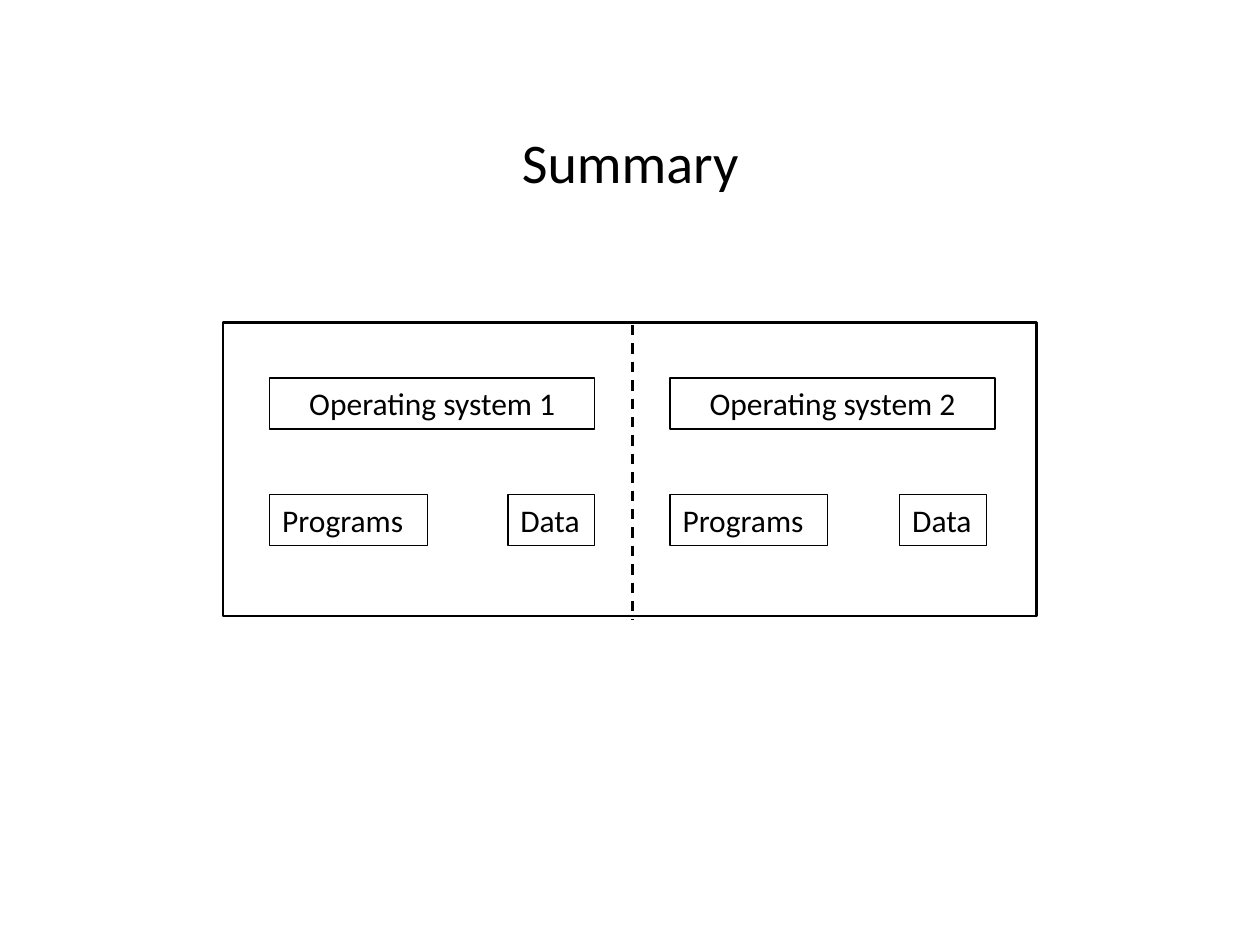
from dataclasses import dataclass

from lxml.etree import SubElement
from pptx import Presentation
from pptx.dml.color import RGBColor
from pptx.enum.dml import MSO_LINE
from pptx.enum.shapes import MSO_CONNECTOR, MSO_SHAPE
from pptx.enum.text import MSO_ANCHOR, PP_ALIGN
from pptx.oxml.ns import qn
from pptx.util import Cm, Pt


@dataclass(frozen=True)
class Theme:
    font: str = "Calibri"
    ink: RGBColor = RGBColor(0, 0, 0)
    title_size: Pt = Pt(32)
    label_size: Pt = Pt(18)
    thin: Pt = Pt(0.75)
    thick: Pt = Pt(1.5)


THEME = Theme()


def write_text(sp, text, size, align, wrap):
    tf = sp.text_frame
    tf.text = text
    tf.word_wrap = wrap
    tf.vertical_anchor = MSO_ANCHOR.TOP
    p = tf.paragraphs[0]
    p.alignment = align
    font = p.runs[0].font
    font.name, font.size = THEME.font, size
    font.color.rgb = THEME.ink


def add_title(s, text, x, y, w, h):
    sp = s.shapes.title
    sp.left, sp.top, sp.width, sp.height = Cm(x), Cm(y), Cm(w), Cm(h)
    write_text(sp, text, THEME.title_size, PP_ALIGN.CENTER, False)


def add_box(shapes, x, y, w, h, line_width):
    sp = shapes.add_shape(MSO_SHAPE.RECTANGLE, Cm(x), Cm(y), Cm(w), Cm(h))
    sp.shadow.inherit = False
    sp.fill.background()
    sp.line.color.rgb = THEME.ink
    sp.line.width = line_width
    return sp


def add_label(shapes, text, x, y, w, align=PP_ALIGN.LEFT, wrap=False):
    sp = add_box(shapes, x, y, w, 1.03, THEME.thin)
    write_text(sp, text, THEME.label_size, align, wrap)


def add_divider(shapes, x, top, bottom):
    line = shapes.add_connector(MSO_CONNECTOR.STRAIGHT, Cm(x), Cm(top), Cm(x), Cm(bottom))
    line.line.color.rgb = THEME.ink
    line.line.width = THEME.thick
    line.line.dash_style = MSO_LINE.DASH
    SubElement(line._element.spPr, qn("a:effectLst"))


def add_partition(shapes, number, x, data_x):
    add_label(shapes, "Programs", x, 9.97, 3.18)
    add_label(shapes, "Data", data_x, 9.97, 1.75)
    add_label(shapes, f"Operating system {number}", x, 7.62, 6.55, PP_ALIGN.CENTER, True)


def main():
    prs = Presentation()
    prs.slide_width, prs.slide_height = Cm(25.4), Cm(19.05)
    s = prs.slides.add_slide(prs.slide_layouts[5])

    # Title
    add_title(s, "Summary", 10.24, 2.44, 4.93, 1.63)

    # Machine split into two partitions
    machine = s.shapes.add_group_shape().shapes
    add_box(machine, 4.5, 6.5, 16.4, 5.92, THEME.thick)
    add_divider(machine, 12.75, 6.55, 12.5)
    for number, (x, data_x) in enumerate([(5.44, 10.24), (13.51, 18.14)], 1):
        add_partition(machine, number, x, data_x)

    prs.save("out.pptx")


if __name__ == "__main__":
    main()
